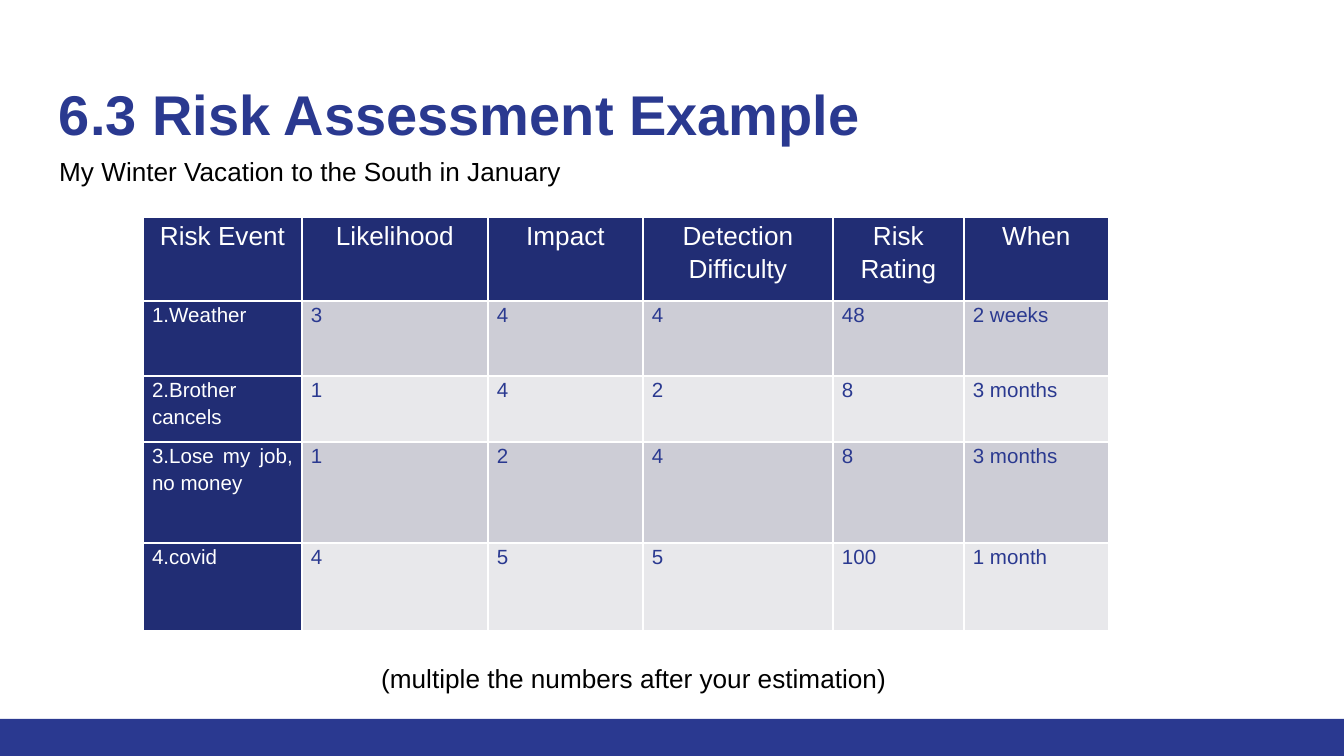
from lxml import etree
from pptx import Presentation
from pptx.dml.color import RGBColor
from pptx.enum.shapes import MSO_SHAPE
from pptx.enum.text import MSO_ANCHOR, MSO_AUTO_SIZE, PP_ALIGN
from pptx.oxml.ns import qn
from pptx.util import Pt

RECTANGLE = MSO_SHAPE.RECTANGLE
TOP = MSO_ANCHOR.TOP
GROW = MSO_AUTO_SIZE.SHAPE_TO_FIT_TEXT
NO_FIT = MSO_AUTO_SIZE.NONE
LEFT, CENTER, JUSTIFY = PP_ALIGN.LEFT, PP_ALIGN.CENTER, PP_ALIGN.JUSTIFY

TITLE_ONLY = 5
EMU_PER_PX = 914400 / 134.4
BLUE, NAVY, WHITE, BLACK = "2A3990", "212D74", "FFFFFF", "000000"
BANDS = ["CDCDD6", "E8E8EB"]

COLUMNS = [159, 186, 155, 190, 131, 145]
ROWS = [84, 75, 66, 101, 88]
RISKS = [
    ["Risk Event", "Likelihood", "Impact", "Detection Difficulty", "Risk Rating", "When"],
    ["1.Weather", "3", "4", "4", "48", "2 weeks"],
    ["2.Brother cancels", "1", "4", "2", "8", "3 months"],
    ["3.Lose my job, no money", "1", "2", "4", "8", "3 months"],
    ["4.covid", "4", "5", "5", "100", "1 month"],
]


def px(length):
    return round(length * EMU_PER_PX)


def color(value):
    return RGBColor.from_string(value)


class SlideBuilder:
    font_name = "Arial"

    def __init__(self, deck):
        self.slide = deck.slides.add_slide(deck.slide_layouts[TITLE_ONLY])

    def format_text(self, frame, size, fill, bold=False, align=LEFT, spacing=1.0, after=0):
        for para in frame.paragraphs:
            para.alignment = align
            para.line_spacing = spacing
            para.space_after = Pt(after)
            for span in para.runs:
                span.font.name = self.font_name
                span.font.size = Pt(size)
                span.font.bold = bold
                span.font.color.rgb = color(fill)

    def bar(self, left, top, width, height, fill):
        shape = self.slide.shapes.add_shape(RECTANGLE, *map(px, (left, top, width, height)))
        shape.shadow.inherit = False
        shape.fill.solid()
        shape.fill.fore_color.rgb = color(fill)
        shape.line.fill.background()

    def title(self, text, left, top, width, height):
        box = self.slide.shapes.title
        box.left, box.top, box.width, box.height = map(px, (left, top, width, height))
        frame = box.text_frame
        frame.text = text
        frame.word_wrap = True
        frame.auto_size = NO_FIT
        frame.vertical_anchor = TOP
        frame.margin_left = frame.margin_right = px(13)
        frame.margin_top = frame.margin_bottom = px(13)
        self.format_text(frame, 30, BLUE, bold=True, spacing=1.1)

    def label(self, text, left, top, width, height):
        box = self.slide.shapes.add_textbox(*map(px, (left, top, width, height)))
        frame = box.text_frame
        frame.text = text
        frame.word_wrap = False
        frame.auto_size = GROW
        self.format_text(frame, 14, BLACK)

    def borders(self, cell, line_color, width):
        properties = cell._tc.get_or_add_tcPr()
        for index, side in enumerate(("lnL", "lnR", "lnT", "lnB")):
            line = etree.Element(qn(f"a:{side}"), w=str(Pt(width)))
            fill = etree.SubElement(line, qn("a:solidFill"))
            etree.SubElement(fill, qn("a:srgbClr"), val=line_color)
            properties.insert(index, line)

    def cell(self, cell, text, fill, size, text_color, align):
        cell.text = text
        cell.margin_left = cell.margin_right = px(9)
        cell.margin_top = cell.margin_bottom = 0
        cell.vertical_anchor = TOP
        cell.fill.solid()
        cell.fill.fore_color.rgb = color(fill)
        self.borders(cell, WHITE, 1)
        self.format_text(cell.text_frame, size, text_color, align=align, spacing=1.15, after=10)

    def table(self, values, left, top, columns, rows):
        table = self.slide.shapes.add_table(
            len(rows), len(columns), px(left), px(top), px(sum(columns)), px(sum(rows))
        ).table
        table.horz_banding = False
        for column, width in zip(table.columns, columns):
            column.width = px(width)
        for row, height in zip(table.rows, rows):
            row.height = px(height)
        for i, line in enumerate(values):
            for j, text in enumerate(line):
                heading = i == 0 or j == 0
                self.cell(
                    table.cell(i, j),
                    text,
                    fill=NAVY if heading else BANDS[(i - 1) % 2],
                    size=14 if i == 0 else 11,
                    text_color=WHITE if heading else BLUE,
                    align=CENTER if i == 0 else JUSTIFY,
                )


def main():
    deck = Presentation()
    deck.slide_width, deck.slide_height = px(1344), px(756)
    page = SlideBuilder(deck)
    page.bar(0, 719, 1344, 37, BLUE)
    page.title("6.3 Risk Assessment Example", 46, 60, 1252, 92)
    page.label("My Winter Vacation to the South in January", 46, 149, 534, 46)
    page.table(RISKS, 143, 217, COLUMNS, ROWS)
    page.label("(multiple the numbers after your estimation)", 368, 656, 534, 46)
    deck.save("out.pptx")


if __name__ == "__main__":
    main()
